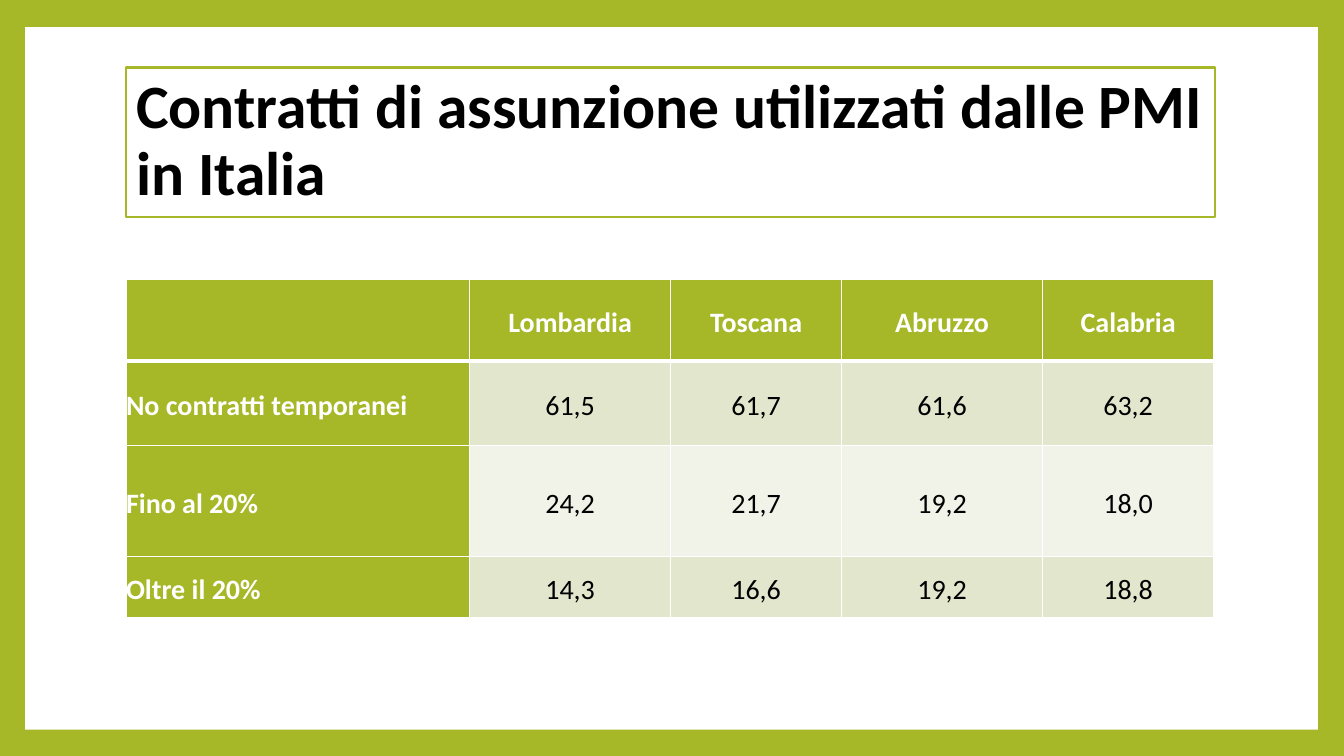
from lxml import etree
from pptx import Presentation
from pptx import oxml
from pptx.dml.color import RGBColor
from pptx.enum import shapes, text
from pptx.util import Inches, Pt

GREEN, WHITE, BLACK = "A6B727", "FFFFFF", "000000"
BANDS = ["E1E6CD", "F1F3E8"]
MARGIN_LEFT, CONTENT_WIDTH = Inches(1.25), Inches(10.8)


def paint(fill, color):
    fill.solid()
    fill.fore_color.rgb = RGBColor.from_string(color)


def write(frame, content, size, color=BLACK, bold=False, align=None, spacing=1.0):
    frame.text = content
    paragraph = frame.paragraphs[0]
    paragraph.alignment = align
    paragraph.line_spacing = spacing
    font = paragraph.runs[0].font
    font.name, font.size, font.bold = "Calibri", Pt(size), bold
    font.color.rgb = RGBColor.from_string(color)


presentation = Presentation()
presentation.slide_width, presentation.slide_height = Inches(13.33), Inches(7.5)
slide = presentation.slides.add_slide(presentation.slide_layouts[5])
paint(slide.background.fill, GREEN)

# White panel, placed behind the title
panel = slide.shapes.add_shape(
    shapes.MSO_SHAPE.RECTANGLE, Inches(0.25), Inches(0.27), Inches(12.82), Inches(6.97))
panel.shadow.inherit = False
paint(panel.fill, WHITE)
panel.line.fill.background()
slide.shapes.title._element.addprevious(panel._element)

title = slide.shapes.title
title.left, title.top = MARGIN_LEFT, Inches(0.67)
title.width, title.height = CONTENT_WIDTH, Inches(1.48)
paint(title.fill, WHITE)
paint(title.line.fill, GREEN)
title.line.width = Pt(1.5)
write(title.text_frame, "Contratti di assunzione utilizzati dalle PMI in Italia", 44,
      bold=True, align=text.PP_ALIGN.LEFT, spacing=0.9)
title.text_frame.word_wrap = True
title.text_frame.auto_size = text.MSO_AUTO_SIZE.NONE
title.text_frame.vertical_anchor = text.MSO_ANCHOR.MIDDLE

# Table
contracts = [
    ["", "Lombardia", "Toscana", "Abruzzo", "Calabria"],
    ["No contratti temporanei", "61,5", "61,7", "61,6", "63,2"],
    ["Fino al 20%", "24,2", "21,7", "19,2", "18,0"],
    ["Oltre il 20%", "14,3", "16,6", "19,2", "18,8"],
]
column_widths = [3.41, 1.99, 1.7, 1.99, 1.7]
row_heights = [0.81, 0.84, 1.1, 0.61]
table = slide.shapes.add_table(
    len(contracts), len(column_widths), MARGIN_LEFT, Inches(2.77),
    CONTENT_WIDTH, Inches(3.35)).table
for column, width in zip(table.columns, column_widths):
    column.width = Inches(width)
for row, height in zip(table.rows, row_heights):
    row.height = Inches(height)

for row_index, values in enumerate(contracts):
    for column_index, value in enumerate(values):
        cell = table.cell(row_index, column_index)
        is_heading = row_index == 0 or column_index == 0
        cell.margin_left = cell.margin_right = cell.margin_top = cell.margin_bottom = 0
        cell.vertical_anchor = text.MSO_ANCHOR.MIDDLE
        for side in "LRTB":
            under_header = (row_index, side) in [(0, "B"), (1, "T")]
            border = etree.SubElement(
                cell._tc.get_or_add_tcPr(), oxml.ns.qn(f"a:ln{side}"),
                w=str(Pt(3 if under_header else 1)))
            border_fill = etree.SubElement(border, oxml.ns.qn("a:solidFill"))
            etree.SubElement(border_fill, oxml.ns.qn("a:srgbClr"), val=WHITE)
        paint(cell.fill, GREEN if is_heading else BANDS[(row_index - 1) % 2])
        if value:
            write(cell.text_frame, value, 20, color=WHITE if is_heading else BLACK,
                  bold=is_heading, spacing=1.15,
                  align=text.PP_ALIGN.CENTER if column_index else text.PP_ALIGN.JUSTIFY)

presentation.save("out.pptx")
